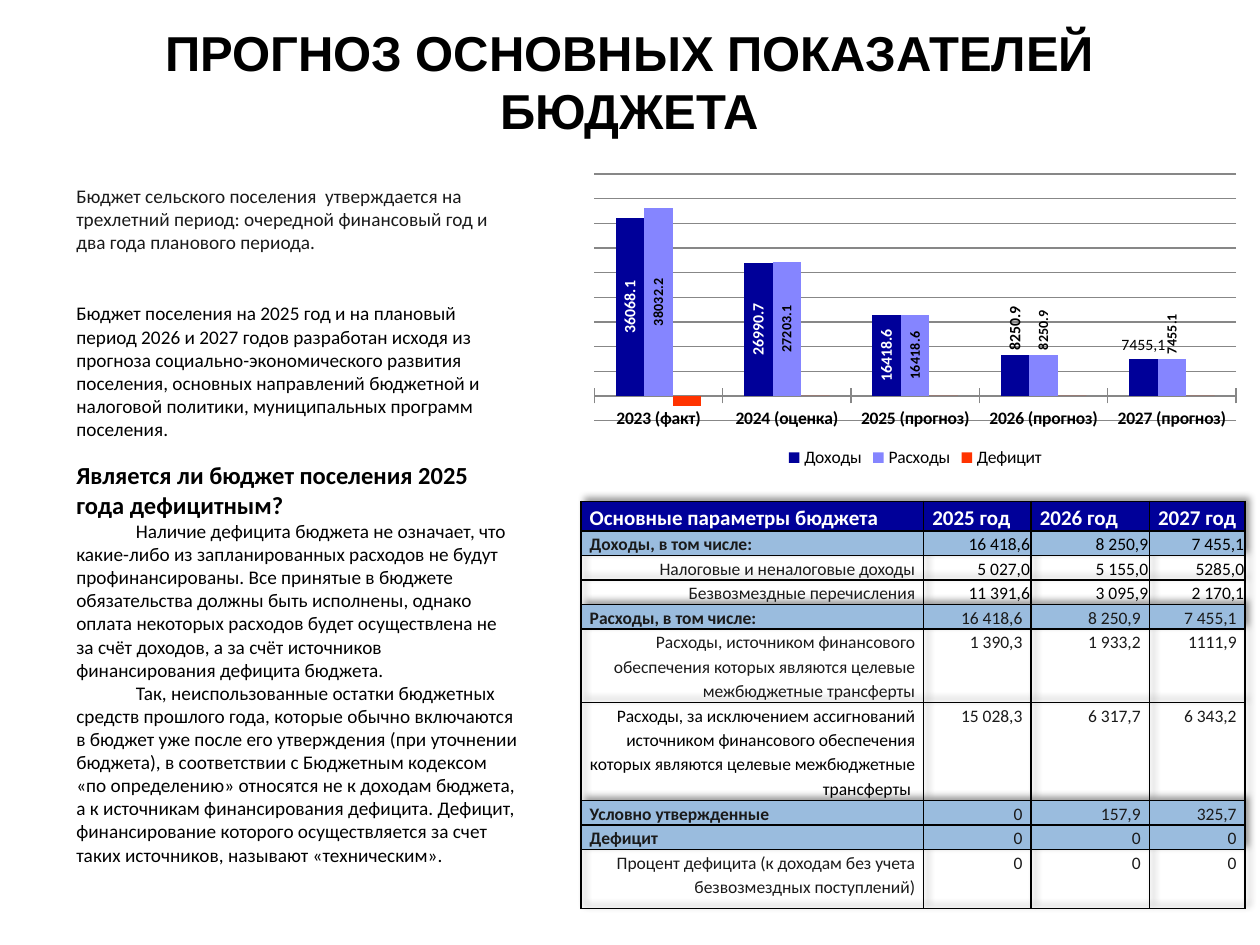
from dataclasses import dataclass

import lxml.etree
import pptx
import pptx.chart.data
import pptx.dml.color
import pptx.enum.chart
import pptx.enum.text
import pptx.oxml.ns
import pptx.util

Pt = pptx.util.Pt
qn = pptx.oxml.ns.qn
Align = pptx.enum.text.PP_ALIGN
Anchor = pptx.enum.text.MSO_ANCHOR
LabelPosition = pptx.enum.chart.XL_LABEL_POSITION

BLACK, WHITE, DARK = "000000", "FFFFFF", "1A1A1A"
NAVY, VIOLET, RED = "000099", "8585FF", "FF3300"
BAND, GRID = "9ABCDE", "878787"
BODY_FONT = "Calibri"


@dataclass
class Line:
    text: str
    size: float = 11
    color: str = BLACK
    bold: bool = False
    indent: float = 0


@dataclass
class TextBlock:
    top: float
    height: float
    lines: list[Line]


@dataclass
class BudgetRow:
    height: float
    texts: list[str]
    section: bool = False
    header: bool = False
    tight: bool = False
    label_color: str = DARK


@dataclass
class BarSeries:
    name: str
    values: list[float]
    color: str
    label_size: float = 0
    label_color: str = BLACK
    outside_size: float = 0


TITLE = "ПРОГНОЗ ОСНОВНЫХ ПОКАЗАТЕЛЕЙ БЮДЖЕТА"
BLOCKS = [
    TextBlock(101.5, 47.5, [Line(
        "Бюджет сельского поселения  утверждается на трехлетний период: очередной "
        "финансовый год и два года планового периода.", color=DARK)]),
    TextBlock(168.5, 87, [Line(
        "Бюджет поселения на 2025 год и на плановый период 2026 и 2027 годов разработан "
        "исходя из прогноза социально-экономического развития поселения, основных "
        "направлений бюджетной и налоговой политики, муниципальных программ поселения.")]),
    TextBlock(258.5, 241, [
        Line("Является ли бюджет поселения 2025 года дефицитным?", 14, bold=True),
        Line("Наличие дефицита бюджета не означает, что какие-либо из запланированных "
             "расходов не будут профинансированы. Все принятые в бюджете обязательства "
             "должны быть исполнены, однако оплата некоторых расходов будет осуществлена "
             "не за счёт доходов, а за счёт источников финансирования дефицита бюджета.",
             indent=34),
        Line("Так, неиспользованные остатки бюджетных средств прошлого года, которые "
             "обычно включаются в бюджет уже после его утверждения (при уточнении "
             "бюджета), в соответствии с Бюджетным кодексом «по определению» относятся "
             "не к доходам бюджета, а к источникам финансирования дефицита. Дефицит, "
             "финансирование которого осуществляется за счет таких источников, называют "
             "«техническим».", indent=34)]),
]
YEARS = ["2023 (факт)", "2024 (оценка)", "2025 (прогноз)", "2026 (прогноз)", "2027 (прогноз)"]
SERIES = [
    BarSeries("Доходы", [36068.1, 26990.7, 16418.6, 8250.9, 7455.1], NAVY, 9, WHITE, 9),
    BarSeries("Расходы", [38032.2, 27203.1, 16418.6, 8250.9, 7455.1], VIOLET, 8, BLACK, 8),
    BarSeries("Дефицит", [-2000, 0, 0, 0, 0], RED),
]
COLUMN_WIDTHS = [195.8, 61.4, 67.6, 54.8]
ROWS = [
    BudgetRow(17, ["Основные параметры бюджета", "2025 год", "2026 год", "2027 год"], header=True),
    BudgetRow(14, ["Доходы, в том числе:", "16 418,6", "8 250,9", "7 455,1"],
              section=True, tight=True),
    BudgetRow(14, ["Налоговые и неналоговые доходы", "5 027,0", "5 155,0", "5285,0"], tight=True),
    BudgetRow(14, ["Безвозмездные перечисления", "11 391,6", "3 095,9", "2 170,1"], tight=True),
    BudgetRow(14, ["Расходы, в том числе:", "16 418,6", "8 250,9", "7 455,1"], section=True),
    BudgetRow(42, ["Расходы, источником финансового обеспечения которых являются целевые "
                   "межбюджетные трансферты", "1 390,3", "1 933,2", "1111,9"]),
    BudgetRow(56, ["Расходы, за исключением ассигнований источником финансового обеспечения "
                   "которых являются целевые межбюджетные трансферты ",
                   "15 028,3", "6 317,7", "6 343,2"], label_color=BLACK),
    BudgetRow(14, ["Условно утвержденные", "0", "157,9", "325,7"], section=True),
    BudgetRow(14, ["Дефицит", "0", "0", "0"], section=True),
    BudgetRow(34, ["Процент дефицита (к доходам без учета безвозмездных поступлений)",
                   "0", "0", "0"]),
]


def rgb(value: str) -> pptx.dml.color.RGBColor:
    return pptx.dml.color.RGBColor.from_string(value)


def style_font(font, size: float, color: str, bold: bool = False, name: str = BODY_FONT) -> None:
    font.size, font.bold, font.name = Pt(size), bold, name
    font.color.rgb = rgb(color)


def add_node(parent, tag: str, **attributes: str):
    return lxml.etree.SubElement(parent, qn(tag), attributes)


def draw_title(page) -> None:
    title = page.shapes.title
    title.left, title.top, title.width, title.height = Pt(19.5), Pt(15), Pt(680.5), Pt(62.5)
    frame = title.text_frame
    frame.text = TITLE
    frame.auto_size = pptx.enum.text.MSO_AUTO_SIZE.NONE
    frame.vertical_anchor = Anchor.MIDDLE
    frame.paragraphs[0].alignment = Align.CENTER
    style_font(frame.paragraphs[0].runs[0].font, 28, BLACK, True, "Arial")


def draw_text(page, block: TextBlock) -> None:
    box = page.shapes.add_textbox(Pt(36.5), Pt(block.top), Pt(267), Pt(block.height))
    frame = box.text_frame
    frame.word_wrap = True
    frame.auto_size = pptx.enum.text.MSO_AUTO_SIZE.SHAPE_TO_FIT_TEXT
    frame.vertical_anchor = Anchor.MIDDLE
    frame.text = "\n".join(line.text for line in block.lines)
    for para, line in zip(frame.paragraphs, block.lines):
        style_font(para.runs[0].font, line.size, line.color, line.bold)
        if line.indent:
            para._p.get_or_add_pPr().set("indent", str(Pt(line.indent)))


def label_series(plot_series, series: BarSeries) -> None:
    labels = plot_series.data_labels
    labels.show_value = True
    labels.position = LabelPosition.CENTER
    style_font(labels.font, series.label_size, series.label_color, True)
    # The two short bars carry their values above
    for index in (3, 4):
        label = plot_series.points[index].data_label
        if series.color == NAVY and index == 4:
            label.text_frame.text = "7455,1"
            style_font(label.text_frame.paragraphs[0].runs[0].font, 9, BLACK)
        else:
            style_font(label.font, series.outside_size, BLACK, True)
        label.position = LabelPosition.OUTSIDE_END
    for body in labels._element.iter(qn("a:bodyPr")):
        if body.getparent().tag == qn("c:txPr"):
            body.set("rot", "-5400000")
            body.set("vert", "horz")


def draw_chart(page) -> None:
    data = pptx.chart.data.CategoryChartData()
    data.categories = YEARS
    for series in SERIES:
        data.add_series(series.name, series.values)
    kind = pptx.enum.chart.XL_CHART_TYPE.COLUMN_CLUSTERED
    chart = page.shapes.add_chart(kind, Pt(332), Pt(96), Pt(382), Pt(174), data).chart
    style_font(chart.font, 10, BLACK)
    chart.has_title = False
    chart.has_legend = True
    chart.legend.position = pptx.enum.chart.XL_LEGEND_POSITION.BOTTOM
    chart.legend.include_in_layout = False
    plot = chart.plots[0]
    plot.gap_width, plot.overlap, plot.vary_by_categories = 150, 0, False
    for plot_series, series in zip(plot.series, SERIES):
        plot_series.format.fill.solid()
        plot_series.format.fill.fore_color.rgb = rgb(series.color)
        plot_series.invert_if_negative = False
        if series.label_size:
            label_series(plot_series, series)
    # Axes
    values, years = chart.value_axis, chart.category_axis
    values.minimum_scale, values.maximum_scale, values.major_unit = -5000, 45000, 5000
    values.visible = False
    values.major_gridlines.format.line.color.rgb = rgb(GRID)
    years.format.line.color.rgb = rgb(GRID)
    years.major_tick_mark = pptx.enum.chart.XL_TICK_MARK.CROSS
    style_font(years.tick_labels.font, 10, BLACK, True)
    # Fixed plot area
    area = chart._chartSpace.find(".//" + qn("c:plotArea"))
    for old in area.findall(qn("c:layout")):
        area.remove(old)
    layout = lxml.etree.Element(qn("c:layout"))
    area.insert(0, layout)
    manual = add_node(layout, "c:manualLayout")
    for tag, value in [("layoutTarget", "inner"), ("xMode", "edge"), ("yMode", "edge"),
                       ("x", "0.02"), ("y", "0.02"), ("w", "0.96"), ("h", "0.81")]:
        add_node(manual, "c:" + tag, val=value)


def border_cell(cell) -> None:
    properties = cell._tc.get_or_add_tcPr()
    for index, side in enumerate(("a:lnL", "a:lnR", "a:lnT", "a:lnB")):
        line = lxml.etree.Element(qn(side), w=str(Pt(1)))
        add_node(add_node(line, "a:solidFill"), "a:srgbClr", val=BLACK)
        properties.insert(index, line)


def fill_cell(cell, row: BudgetRow, column: int) -> None:
    tight = row.tight and column > 0
    cell.text_frame.text = row.texts[column]
    cell.margin_left = cell.margin_right = Pt(0.7 if tight else 5)
    cell.margin_top, cell.margin_bottom = Pt(0.7 if tight else 0), 0
    cell.vertical_anchor = Anchor.BOTTOM if tight else Anchor.TOP
    para = cell.text_frame.paragraphs[0]
    heading = row.header or (row.section and column == 0)
    para.alignment = Align.JUSTIFY if heading else Align.RIGHT
    para.line_spacing = 1.0 if tight else 1.15
    color = WHITE if row.header else BLACK if tight else DARK if column else row.label_color
    style_font(para.runs[0].font, 12 if row.header else 10, color, heading)
    if row.header or row.section:
        cell.fill.solid()
        cell.fill.fore_color.rgb = rgb(NAVY if row.header else BAND)
    else:
        cell.fill.background()
    border_cell(cell)


def draw_table(page) -> None:
    frame = page.shapes.add_table(len(ROWS), len(COLUMN_WIDTHS), Pt(332), Pt(286.5),
                                  Pt(sum(COLUMN_WIDTHS)), Pt(sum(row.height for row in ROWS)))
    table = frame.table
    table.first_row = table.horz_banding = False
    for column, width in zip(table.columns, COLUMN_WIDTHS):
        column.width = Pt(width)
    for index, row in enumerate(ROWS):
        table.rows[index].height = Pt(row.height)
        for column in range(len(COLUMN_WIDTHS)):
            fill_cell(table.cell(index, column), row, column)
    # Soft shadow
    effects = lxml.etree.Element(qn("a:effectLst"))
    table._tbl.tblPr.insert(0, effects)
    shadow = add_node(effects, "a:outerShdw", blurRad=str(Pt(4)), dist=str(Pt(3)),
                      dir="18900000", algn="bl", rotWithShape="0")
    add_node(add_node(shadow, "a:srgbClr", val=BLACK), "a:alpha", val="40000")


def main() -> None:
    deck = pptx.Presentation()
    deck.slide_width, deck.slide_height = Pt(720), Pt(540)
    page = deck.slides.add_slide(deck.slide_layouts[5])
    draw_title(page)
    draw_table(page)
    for block in BLOCKS:
        draw_text(page, block)
    draw_chart(page)
    deck.save("out.pptx")


if __name__ == "__main__":
    main()
